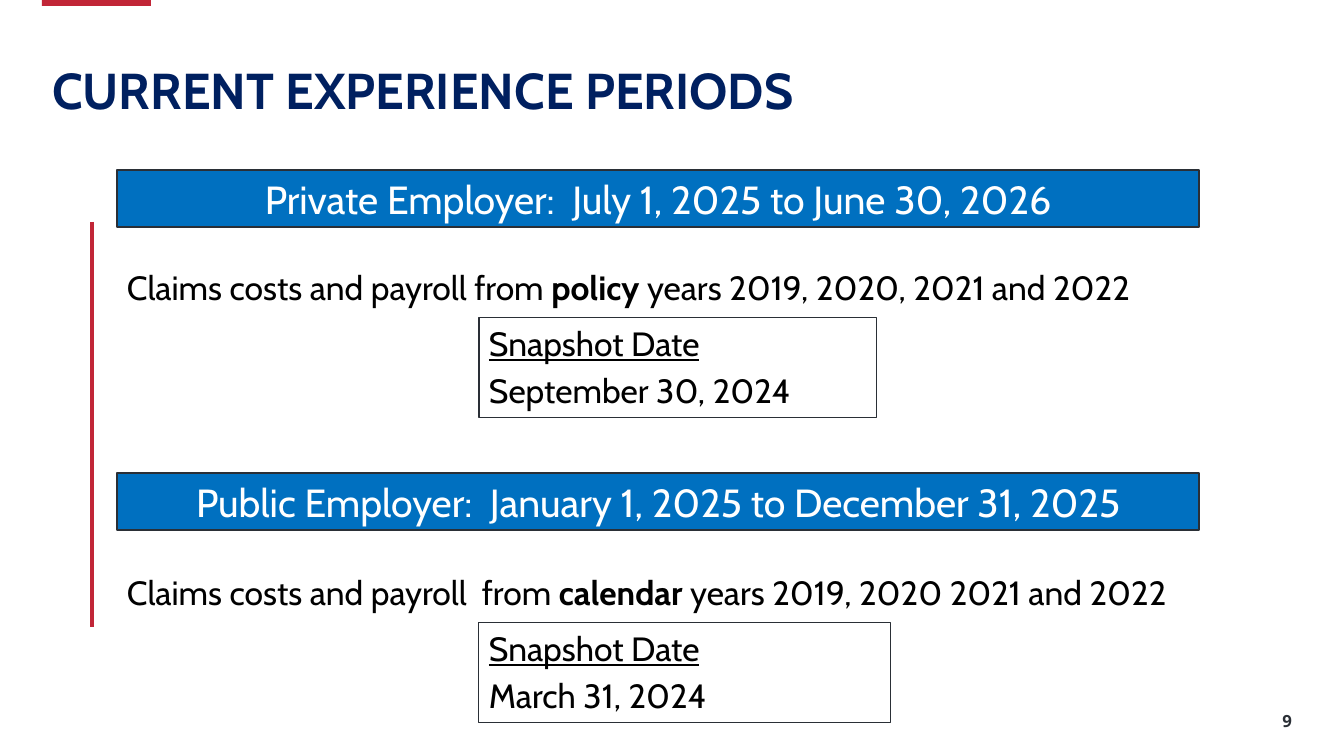
from lxml import etree
from pptx import Presentation
from pptx import util as u
from pptx.dml.color import RGBColor
from pptx.enum import shapes, text
from pptx.oxml.ns import qn

NAVY = RGBColor(0x00, 0x20, 0x60)
BLUE = RGBColor(0x00, 0x70, 0xC0)
RED = RGBColor(0xC1, 0x26, 0x37)
DARK = RGBColor(0x2A, 0x2F, 0x36)
BLACK = RGBColor(0x00, 0x00, 0x00)
WHITE = RGBColor(0xFF, 0xFF, 0xFF)
LEFT, CENTER, RIGHT = text.PP_ALIGN.LEFT, text.PP_ALIGN.CENTER, text.PP_ALIGN.RIGHT
TOP, MIDDLE, BOTTOM = text.MSO_ANCHOR.TOP, text.MSO_ANCHOR.MIDDLE, text.MSO_ANCHOR.BOTTOM


def px(length):
    return u.Emu(round(length * 914400 / 100.8))


class Deck:
    font = "Cabin"

    def __init__(self):
        self.prs = Presentation()
        self.prs.slide_width, self.prs.slide_height = px(1344), px(756)
        self.slide = self.prs.slides.add_slide(self.prs.slide_layouts[5])

    def style(self, paragraph, size, color, align=LEFT, bold=None, font=None):
        paragraph.alignment = align
        face = paragraph.font
        face.name, face.size, face.bold = font or self.font, u.Pt(size), bold
        face.color.rgb = color

    def frame(self, shape, anchor):
        frame = shape.text_frame
        frame.word_wrap = True
        frame.auto_size = text.MSO_AUTO_SIZE.NONE
        frame.vertical_anchor = anchor
        return frame

    def title(self, words, x, y, w, h):
        title = self.slide.shapes.title
        title.left, title.top, title.width, title.height = map(px, (x, y, w, h))
        frame = self.frame(title, TOP)
        frame.text = words
        self.style(frame.paragraphs[0], 36, NAVY, bold=True)
        frame.paragraphs[0].line_spacing = 0.9

    def box(self, x, y, w, h, fill=None, line=None, weight=1):
        box = self.slide.shapes.add_shape(
            shapes.MSO_SHAPE.RECTANGLE, *map(px, (x, y, w, h)))
        box.shadow.inherit = False
        if fill is None:
            box.fill.background()
        else:
            box.fill.solid()
            box.fill.fore_color.rgb = fill
        if line is None:
            box.line.fill.background()
        else:
            box.line.color.rgb = line
            box.line.width = u.Pt(weight)
        return box

    def rule(self, x, top, bottom):
        rule = self.slide.shapes.add_connector(
            shapes.MSO_CONNECTOR.STRAIGHT, *map(px, (x, top, x, bottom)))
        rule.line.color.rgb = RED
        rule.line.width = u.Pt(3)
        etree.SubElement(rule._element.spPr, qn("a:effectLst"))

    def banner(self, words, x, y, w, h):
        frame = self.frame(self.box(x, y, w, h, BLUE, DARK, 1.5), BOTTOM)
        frame.text = words
        self.style(frame.paragraphs[0], 28, WHITE, CENTER)
        frame.paragraphs[0].line_spacing = u.Pt(22)

    def label(self, runs, x, y, w, h, size, color, anchor=TOP, **style):
        """Runs are (words, bold) pairs; bold None follows the paragraph."""
        label = self.slide.shapes.add_textbox(*map(px, (x, y, w, h)))
        paragraph = self.frame(label, anchor).paragraphs[0]
        self.style(paragraph, size, color, **style)
        for words, bold in runs:
            run = paragraph.add_run()
            run.text, run.font.bold = words, bold

    def snapshot(self, date, x, y, w, h):
        frame = self.frame(self.box(x, y, w, h, line=DARK, weight=0.75), TOP)
        frame.text = f"Snapshot Date\n{date}"
        heading, day = frame.paragraphs
        for paragraph in (heading, day):
            self.style(paragraph, 24, BLACK)
        heading.font.underline = True
        day.space_before = u.Pt(5)


def main():
    deck = Deck()

    # Accents, title and page number
    deck.box(42, 0, 109, 6, RED)
    deck.rule(92, 222, 627)
    deck.title("CURRENT EXPERIENCE PERIODS", 42, 61, 1260, 108)
    deck.label([("9", None)], 1000, 701, 302, 40, 12, DARK, MIDDLE,
               align=RIGHT, bold=True, font="Open Sans")

    # One block per employer type
    periods = [
        (170, "Private Employer:  July 1, 2025 to June 30, 2026",
         262, "Claims costs and payroll from ", "policy",
         " years 2019, 2020, 2021 and 2022", "September 30, 2024", 398),
        (473, "Public Employer:  January 1, 2025 to December 31, 2025",
         567, "Claims costs and payroll  from ", "calendar",
         " years 2019, 2020 2021 and 2022", "March 31, 2024", 412),
    ]
    for banner_top, period, claims_top, lead, basis, years, date, date_width in periods:
        deck.banner(period, 117, banner_top, 1082, 57)
        deck.label([(lead, None), (basis, True), (years, None)],
                   117, claims_top, 1140, 51, 24, BLACK)
        deck.snapshot(date, 479, claims_top + 56, date_width, 100)

    deck.prs.save("out.pptx")


if __name__ == "__main__":
    main()
